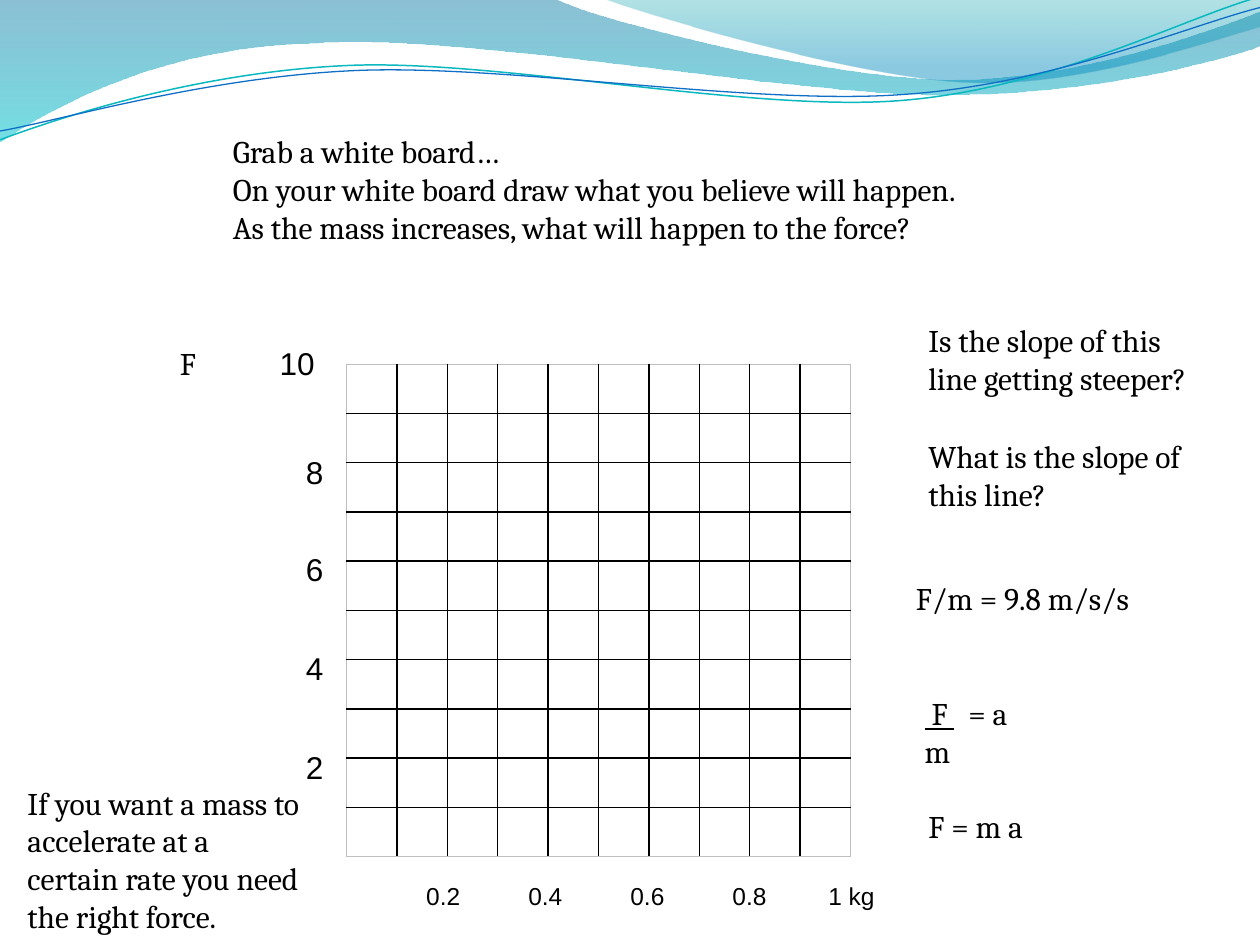
"""Builds a physics slide with a force against mass grid and discussion questions."""
from dataclasses import dataclass

from lxml.etree import SubElement
from pptx import Presentation
from pptx.dml.color import RGBColor
from pptx.oxml.ns import qn
from pptx.slide import Slide
from pptx.util import Inches, Pt

COLORS = {
    "ink": "000000", "edge": "BFBFBF", "deep": "0074A1", "aqua": "00C6CF",
    "teal": "00A1A9", "sky": "008BBF", "teal_line": "0AB8BF", "blue_line": "0F6FC6",
}
SERIF, SANS = "Cambria", "Arial"
GRID_SIZE = 10


@dataclass
class Stop:
    position: float
    color: str
    opacity: int


@dataclass
class Wave:
    outline: list[tuple[float, ...]]
    stops: tuple[Stop, ...] = ()
    line: str = ""
    weight: float = 0


@dataclass
class Note:
    left: float
    top: float
    width: float
    height: float
    lines: tuple[str, ...]


WAVES = [
    Wave([(0, 0), (4.4, -0.01), (4.76, 0.17, 6.64, 0.63, 7.58, 0.63),
          (8.53, 0.63, 9.58, 0.26, 10, 0.09), (10.01, 0.36),
          (9.83, 0.44, 8.7, 0.76, 7.46, 0.75), (6.22, 0.75, 3.82, 0.28, 2.57, 0.34),
          (1.29, 0.36, 0.46, 0.83, -0.01, 1.13)],
         stops=(Stop(0, "deep", 45), Stop(1, "aqua", 55))),
    Wave([(4.79, -0.01), (5.09, 0.11, 6.82, 0.62, 7.69, 0.65),
          (8.56, 0.69, 9.61, 0.32, 10, 0.21), (10, 0)],
         stops=(Stop(0, "teal", 30), Stop(0.8, "sky", 45))),
    Wave([(0, 1.11), (0.48, 0.93, 1.58, 0.57, 2.77, 0.52),
          (3.95, 0.47, 5.93, 0.89, 7.13, 0.8), (8.33, 0.71, 9.38, 0.15, 9.98, -0.02)],
         line="teal_line", weight=0.85),
    Wave([(0, 1.04), (0.47, 0.96, 1.64, 0.61, 2.83, 0.56),
          (4.03, 0.51, 5.97, 0.84, 7.17, 0.75), (8.36, 0.67, 9.41, 0.21, 10, 0.06)],
         line="blue_line", weight=0.75),
]
NOTES = [
    Note(7.17, 4.55, 2, 0.4, ("F/m = 9.8 m/s/s",)),
    Note(7.27, 6.36, 2, 0.4, ("F = m a",)),
    Note(1.75, 1, 6.5, 1.01, (
        "Grab a white board…",
        "On your white board draw what you believe will happen.",
        "As the mass increases, what will happen to the force?")),
    Note(7.27, 2.5, 2.4, 0.71, ("Is the slope of this line getting steeper?",)),
    Note(7.27, 3.42, 2.4, 0.71, ("What is the slope of this line?",)),
    Note(0.12, 6.17, 2.4, 1.31, (
        "If you want a mass to accelerate at a certain rate you need the right force.",)),
]
FORCE_GAPS = {"8": 41, "6": 33.5, "4": 34.8, "2": 35.5}
MASSES = ("0.2", "0.4", "0.6", "0.8", "1 kg")


def rgb(name: str) -> RGBColor:
    return RGBColor.from_string(COLORS[name])


def bend(shape, outline: list[tuple[float, ...]]) -> None:
    lines = list(shape.element.spPr.iter(qn("a:lnTo")))
    for line, segment in zip(lines, outline[1:]):
        if len(segment) == 2:
            continue
        curve = line.makeelement(qn("a:cubicBezTo"))
        for x, y in zip(segment[::2], segment[1::2]):
            SubElement(curve, qn("a:pt"), x=str(Inches(x) - shape.left),
                       y=str(Inches(y) - shape.top))
        line.getparent().replace(line, curve)


def add_wave(page: Slide, wave: Wave) -> None:
    corners = [(Inches(segment[-2]), Inches(segment[-1])) for segment in wave.outline]
    builder = page.shapes.build_freeform(*corners[0])
    builder.add_line_segments(corners[1:], close=bool(wave.stops))
    shape = builder.convert_to_shape()
    bend(shape, wave.outline)
    shape.shadow.inherit = False
    if not wave.stops:
        shape.fill.background()
        shape.line.color.rgb = rgb(wave.line)
        shape.line.width = Pt(wave.weight)
        return
    shape.line.fill.background()
    shape.fill.gradient()
    shape.fill.gradient_angle = 270
    for target, stop in zip(shape.fill.gradient_stops, wave.stops):
        target.position = stop.position
        target.color.rgb = rgb(stop.color)
    for color, stop in zip(shape.element.spPr.iter(qn("a:srgbClr")), wave.stops):
        SubElement(color, qn("a:alpha"), val=str(stop.opacity * 1000))


def add_box(page: Slide, left: float, top: float, width: float, height: float):
    box = page.shapes.add_textbox(Inches(left), Inches(top), Inches(width), Inches(height))
    box.text_frame.word_wrap = True
    return box.text_frame


def add_span(para, text: str, *, font: str = SERIF, size: float = 18,
             underline: bool = False) -> None:
    span = para.add_run()
    span.text = text
    span.font.name = font
    span.font.size = Pt(size)
    span.font.underline = underline
    span.font.color.rgb = rgb("ink")


def set_tabs(para, stops: list[float], align: str) -> None:
    tabs = SubElement(para._p.get_or_add_pPr(), qn("a:tabLst"))
    for stop in stops:
        SubElement(tabs, qn("a:tab"), pos=str(Inches(stop)), algn=align)


def add_note(page: Slide, note: Note) -> None:
    frame = add_box(page, note.left, note.top, note.width, note.height)
    for index, line in enumerate(note.lines):
        add_span(frame.add_paragraph() if index else frame.paragraphs[0], line)


def add_grid(page: Slide) -> None:
    table = page.shapes.add_table(GRID_SIZE, GRID_SIZE, Inches(2.75), Inches(2.89),
                                  Inches(4), Inches(3.91)).table
    table.first_row = table.horz_banding = False
    last = GRID_SIZE - 1
    for row in range(GRID_SIZE):
        for column in range(GRID_SIZE):
            cell = table.cell(row, column)
            cell.margin_top = cell.margin_bottom = 0
            outer = {"lnL": column == 0, "lnR": column == last,
                     "lnT": row == 0, "lnB": row == last}
            for side, is_outer in outer.items():
                border = SubElement(cell._tc.get_or_add_tcPr(), qn(f"a:{side}"),
                                    w=str(Pt(0.75 if is_outer else 1)))
                fill = SubElement(border, qn("a:solidFill"))
                SubElement(fill, qn("a:srgbClr"), val=COLORS["edge" if is_outer else "ink"])
            cell.fill.background()


def add_axes(page: Slide) -> None:
    force = add_box(page, 1.33, 2.68, 1.42, 4.59)
    para = force.paragraphs[0]
    set_tabs(para, [0.79], "l")
    add_span(para, "F\t")
    add_span(para, "10", font=SANS)
    for value, gap in FORCE_GAPS.items():
        para = force.add_paragraph()
        para.space_before = Pt(gap)
        set_tabs(para, [1], "l")
        add_span(para, f"\t{value}", font=SANS)
    para = add_box(page, 2.75, 6.94, 4.67, 0.34).paragraphs[0]
    set_tabs(para, [0.67 + 0.81 * index for index in range(len(MASSES))], "ctr")
    add_span(para, "".join(f"\t{mass}" for mass in MASSES), font=SANS, size=14)


def add_fraction(page: Slide) -> None:
    frame = add_box(page, 7.24, 5.46, 2, 0.71)
    add_span(frame.paragraphs[0], " F ", underline=True)
    add_span(frame.paragraphs[0], "  = a")
    add_span(frame.add_paragraph(), "m")


def main() -> None:
    deck = Presentation()
    deck.slide_width, deck.slide_height = Inches(10), Inches(7.5)
    page = deck.slides.add_slide(deck.slide_layouts[6])
    for wave in WAVES:
        add_wave(page, wave)
    add_grid(page)
    add_axes(page)
    add_fraction(page)
    for note in NOTES:
        add_note(page, note)
    deck.save("out.pptx")


if __name__ == "__main__":
    main()
